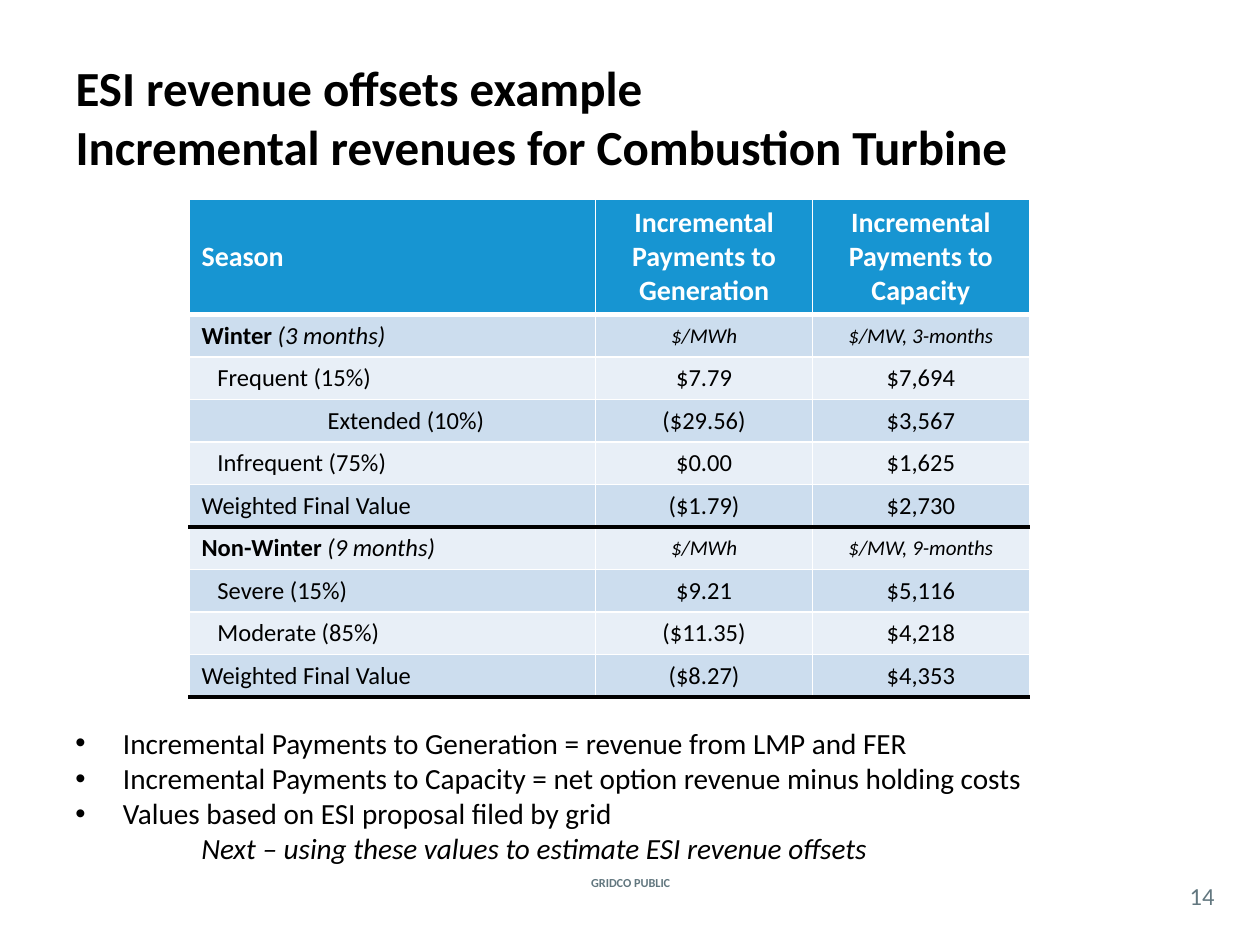
from typing import NamedTuple

from lxml.etree import SubElement
from pptx import Presentation
from pptx.dml.color import RGBColor
from pptx.enum.text import MSO_ANCHOR as Anchor, PP_ALIGN as Align
from pptx.oxml.ns import qn
from pptx.util import Cm, Pt

FONT = "Calibri"
BLACK = RGBColor(0x00, 0x00, 0x00)
WHITE = RGBColor(0xFF, 0xFF, 0xFF)
BLUE = RGBColor(0x17, 0x95, 0xD2)
DARK = RGBColor(0xCC, 0xDD, 0xEE)
LIGHT = RGBColor(0xE8, 0xEF, 0xF7)
GREY = RGBColor(0x62, 0x77, 0x7F)


class Row(NamedTuple):
    label: str
    energy: str
    capacity: str
    span: str = ""  # months of a season heading
    tab: float = 0  # tab stop of an indented label, in cm
    last: bool = False  # closes a season with a thick rule


class Box(NamedTuple):
    left: float
    top: float
    width: float
    height: float


HEADS = ["Season", "Incremental Payments to Generation",
         "Incremental Payments to Capacity"]
ROWS = [
    Row("Winter ", "$/MWh", "$/MW, 3-months", span="(3 months)"),
    Row("Frequent (15%)", "$7.79", "$7,694", tab=0.32),
    Row("Extended (10%)", "($29.56)", "$3,567", tab=2.54),
    Row("Infrequent (75%)", "$0.00", "$1,625", tab=0.32),
    Row("Weighted Final Value", "($1.79)", "$2,730", last=True),
    Row("Non-Winter ", "$/MWh", "$/MW, 9-months", span="(9 months)"),
    Row("Severe (15%)", "$9.21", "$5,116", tab=0.32),
    Row("Moderate (85%)", "($11.35)", "$4,218", tab=0.32),
    Row("Weighted Final Value", "($8.27)", "$4,353", last=True),
]
NOTES = [
    "Incremental Payments to Generation = revenue from LMP and FER",
    "Incremental Payments to Capacity = net option revenue minus holding costs",
    "Values based on ESI proposal filed by grid",
]
CLOSING = "\tNext – using these values to estimate ESI revenue offsets"


def style(run, size: float, color: RGBColor = BLACK,
          bold: bool = False, italic: bool = False) -> None:
    font = run.font
    font.name, font.size = FONT, Pt(size)
    font.bold, font.italic = bold, italic
    font.color.rgb = color


def place(shape, box: Box) -> None:
    shape.left, shape.top = Cm(box.left), Cm(box.top)
    shape.width, shape.height = Cm(box.width), Cm(box.height)


def add_tab(para, pos: float) -> None:
    tabs = SubElement(para._p.get_or_add_pPr(), qn("a:tabLst"))
    SubElement(tabs, qn("a:tab"), pos=str(Cm(pos)), algn="l")


def add_bullet(para, indent: float) -> None:
    props = para._p.get_or_add_pPr()
    props.set("marL", str(Cm(indent)))
    props.set("indent", str(-Cm(indent)))
    SubElement(props, qn("a:buFont"), typeface="Arial")
    SubElement(props, qn("a:buChar"), char="•")


def add_edge(cell, side: str, color: RGBColor, width: float) -> None:
    line = SubElement(cell._tc.get_or_add_tcPr(), qn("a:ln" + side),
                      w=str(Pt(width)))
    fill = SubElement(line, qn("a:solidFill"))
    SubElement(fill, qn("a:srgbClr"), val=str(color))


def paint(cell, fill: RGBColor, top: tuple, bottom: tuple) -> None:
    """Draw the cell's edges, then its fill, in schema order."""
    thin = (WHITE, 1)
    for side, edge in zip("LRTB", (thin, thin, top, bottom)):
        add_edge(cell, side, *edge)
    cell.fill.solid()
    cell.fill.fore_color.rgb = fill


def fill_label(cell, row: Row) -> None:
    para = cell.text_frame.paragraphs[0]
    if row.tab:
        add_tab(para, row.tab)
    para.text = ("\t" if row.tab else "") + row.label
    style(para.runs[0], 14, bold=bool(row.span))
    if row.span:
        run = para.add_run()
        run.text = row.span
        style(run, 14, italic=True)


def fill_value(cell, text: str, unit: bool) -> None:
    cell.vertical_anchor = Anchor.MIDDLE
    para = cell.text_frame.paragraphs[0]
    para.text, para.alignment = text, Align.CENTER
    style(para.runs[0], 12 if unit else 14, italic=unit)


def add_payments(slide) -> None:
    frame = slide.shapes.add_table(len(ROWS) + 1, len(HEADS), Cm(3.81),
                                   Cm(4.02), Cm(16.94), Cm(10.06))
    table = frame.table
    for col, width in zip(table.columns, (8.2, 4.37, 4.37)):
        col.width = Cm(width)
    for i, line in enumerate(table.rows):
        line.height = Cm(0.85 if i else 2.32)

    thin, head, thick = (WHITE, 1), (WHITE, 3), (BLACK, 2.25)
    for i, text in enumerate(HEADS):
        cell = table.cell(0, i)
        cell.vertical_anchor = Anchor.BOTTOM if i else Anchor.MIDDLE
        para = cell.text_frame.paragraphs[0]
        para.text = text
        para.alignment = Align.CENTER if i else Align.LEFT
        style(para.runs[0], 16, WHITE, bold=True)
        paint(cell, BLUE, thin, head)

    top = head
    for i, row in enumerate(ROWS):
        cells = table.rows[i + 1].cells
        fill_label(cells[0], row)
        fill_value(cells[1], row.energy, bool(row.span))
        fill_value(cells[2], row.capacity, bool(row.span))
        bottom = thick if row.last else thin
        for cell in cells:
            paint(cell, LIGHT if i % 2 else DARK, top, bottom)
        top = bottom


def add_text(slide, box: Box):
    shape = slide.shapes.add_textbox(0, 0, 0, 0)
    place(shape, box)
    shape.text_frame.word_wrap = True
    return shape.text_frame


def add_mark(slide, box: Box, text: str, size: float, bold: bool) -> None:
    """Add a centred grey footer text."""
    frame = add_text(slide, box)
    frame.margin_left = frame.margin_right = 0
    frame.margin_top = frame.margin_bottom = 0
    frame.vertical_anchor = Anchor.MIDDLE
    frame.text = text
    para = frame.paragraphs[0]
    para.alignment = Align.CENTER
    style(para.runs[0], size, GREY, bold)


def add_notes(slide) -> None:
    frame = add_text(slide, Box(1.27, 14.5, 22.86, 3.38))
    for i, text in enumerate(NOTES + [CLOSING]):
        para = frame.add_paragraph() if i else frame.paragraphs[0]
        if text == CLOSING:
            add_tab(para, 2.54)
        else:
            add_bullet(para, 0.96)
        para.text = text
        style(para.runs[0], 16.7, italic=text == CLOSING)


def main() -> None:
    deck = Presentation()
    deck.slide_width, deck.slide_height = Cm(25.4), Cm(19.05)
    slide = deck.slides.add_slide(deck.slide_layouts[5])

    title = slide.shapes.title
    place(title, Box(1.27, 0.76, 22.86, 3.18))
    frame = title.text_frame
    frame.text = "ESI revenue offsets example\vIncremental revenues for Combustion Turbine"
    frame.vertical_anchor = Anchor.MIDDLE
    para = frame.paragraphs[0]
    para.alignment = Align.LEFT
    for run in para.runs:
        style(run, 28, bold=True)

    add_payments(slide)
    add_notes(slide)
    add_mark(slide, Box(10.85, 17.58, 3.73, 0.43), "GRIDCO PUBLIC", 7, True)
    add_mark(slide, Box(23.7, 17.68, 1.07, 0.74), "14", 14, False)
    deck.save("out.pptx")


if __name__ == "__main__":
    main()
